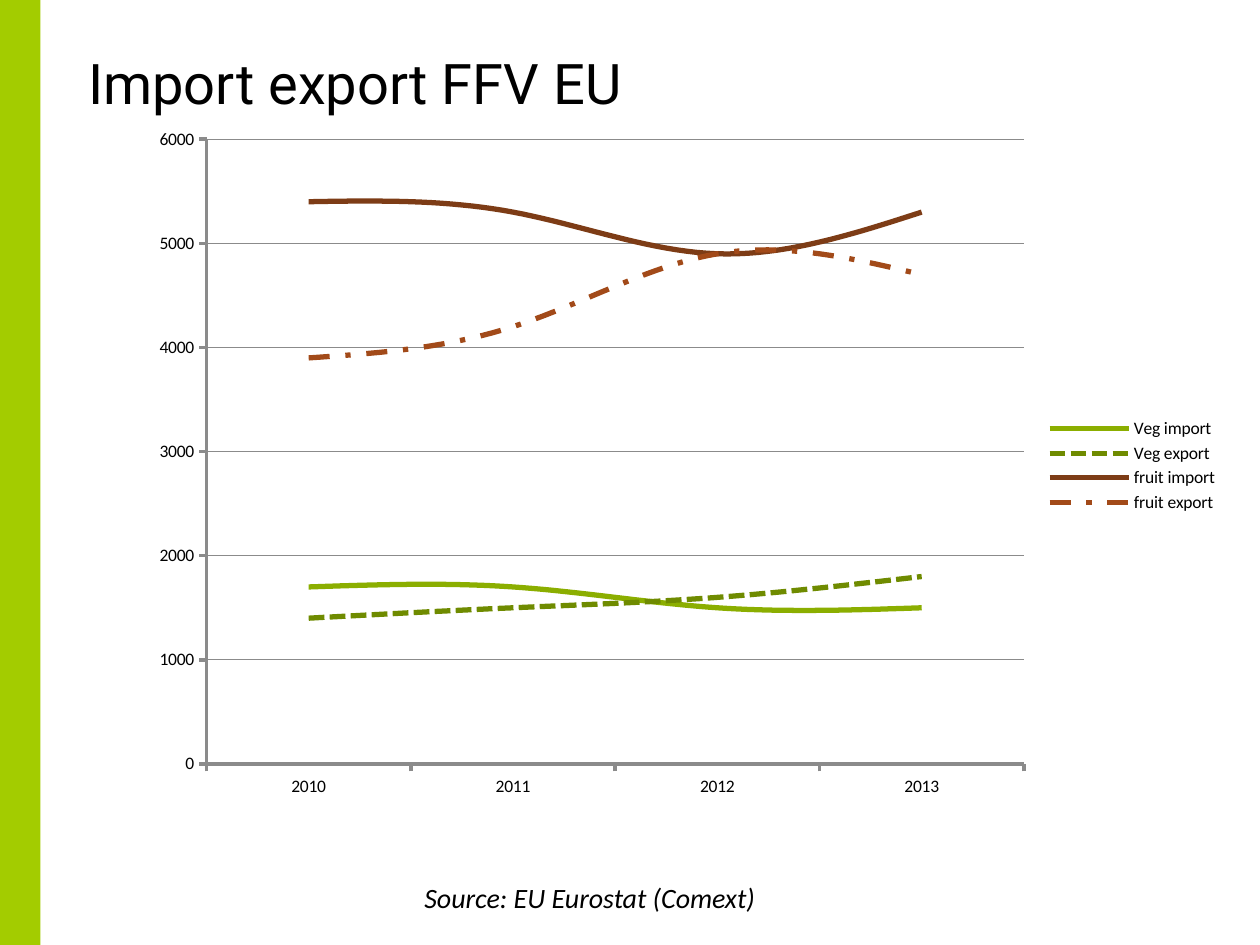
"""Build a slide with a line chart of EU fruit and vegetable trade."""
from dataclasses import dataclass

from lxml import etree
from pptx import Presentation
from pptx.chart.data import CategoryChartData
from pptx.dml.color import RGBColor
from pptx.enum.chart import XL_CHART_TYPE, XL_LEGEND_POSITION, XL_MARKER_STYLE, XL_TICK_MARK
from pptx.enum.dml import MSO_LINE
from pptx.enum.shapes import MSO_SHAPE
from pptx.oxml.ns import qn
from pptx.util import Inches, Pt

LINE = XL_CHART_TYPE.LINE
RIGHT = XL_LEGEND_POSITION.RIGHT
NO_MARKER = XL_MARKER_STYLE.NONE
OUTSIDE = XL_TICK_MARK.OUTSIDE
NO_TICK = XL_TICK_MARK.NONE
SOLID, DOTTED, DASH_DOT = MSO_LINE.SOLID, MSO_LINE.SQUARE_DOT, MSO_LINE.DASH_DOT
RECTANGLE = MSO_SHAPE.RECTANGLE


@dataclass(frozen=True)
class Theme:
    """Colours, fonts and type sizes of the slide."""
    band: str = "A3CC00"
    text: str = "000000"
    axis: str = "8B8B8B"
    title_font: str = "Roboto"
    body_font: str = "Calibri"
    title_size: int = 32
    source_size: int = 16
    chart_size: int = 10


THEME = Theme()
YEARS = ["2010", "2011", "2012", "2013"]
SERIES = [
    ("Veg import", (1700, 1700, 1500, 1500), "8BAE00", SOLID),
    ("Veg export", (1400, 1500, 1600, 1800), "6F8B00", DOTTED),
    ("fruit import", (5400, 5300, 4900, 5300), "7D3C16", SOLID),
    ("fruit export", (3900, 4200, 4900, 4700), "A24A19", DASH_DOT),
]


def rgb(value):
    """Return a colour from its hex value."""
    return RGBColor.from_string(value)


def add_band(s, x, y, w, h, color):
    """Add a plain filled rectangle."""
    sp = s.shapes.add_shape(RECTANGLE, Inches(x), Inches(y), Inches(w), Inches(h))
    sp.shadow.inherit = False
    sp.fill.solid()
    sp.fill.fore_color.rgb = rgb(color)
    sp.line.fill.background()


def add_text(s, text, x, y, w, h, *, font, size, italic=False, inset=None, leading=None, wrap=True):
    """Add a text box with one formatted paragraph."""
    tf = s.shapes.add_textbox(Inches(x), Inches(y), Inches(w), Inches(h)).text_frame
    tf.word_wrap = wrap
    if inset is not None:
        tf.margin_left = tf.margin_top = tf.margin_right = tf.margin_bottom = Inches(inset)
    p = tf.paragraphs[0]
    if leading:
        p.line_spacing = Pt(leading)
    r = p.add_run()
    r.text = text
    r.font.name = font
    r.font.size = Pt(size)
    r.font.italic = italic
    r.font.color.rgb = rgb(THEME.text)


def style_line(line, color, width, dash=SOLID):
    """Set the colour, width and dash of a line."""
    line.color.rgb = rgb(color)
    line.width = Pt(width)
    line.dash_style = dash


def set_plot_layout(chart, **fractions):
    """Fix the inner plot area as fractions of the chart."""
    area = chart.plots[0]._element.getparent()
    for old in area.findall(qn("c:layout")):
        area.remove(old)
    layout = etree.Element(qn("c:layout"))
    area.insert(0, layout)
    manual = etree.SubElement(layout, qn("c:manualLayout"))
    settings = {"layoutTarget": "inner", "xMode": "edge", "yMode": "edge", **fractions}
    for name, value in settings.items():
        etree.SubElement(manual, qn(f"c:{name}")).set("val", str(value))


def add_line_chart(s, x, y, w, h):
    """Add the smoothed line chart with its axes and legend."""
    data = CategoryChartData(number_format="General")
    data.categories = YEARS
    for name, values, _, _ in SERIES:
        data.add_series(name, values)
    chart = s.shapes.add_chart(LINE, Inches(x), Inches(y), Inches(w), Inches(h), data).chart
    chart.has_title = False
    chart.font.name = THEME.body_font
    chart.font.size = Pt(THEME.chart_size)
    chart.font.color.rgb = rgb(THEME.text)
    chart.has_legend = True
    chart.legend.position = RIGHT
    chart.legend.include_in_layout = False
    for axis in (chart.category_axis, chart.value_axis):
        axis.major_tick_mark = OUTSIDE
        axis.minor_tick_mark = NO_TICK
        style_line(axis.format.line, THEME.axis, 2)
    axis = chart.value_axis
    axis.minimum_scale, axis.maximum_scale, axis.major_unit = 0, 6000, 1000
    axis.has_major_gridlines = True
    style_line(axis.major_gridlines.format.line, THEME.axis, 0.75)
    plot = chart.plots[0]
    plot.vary_by_categories = False
    for series, (_, _, color, dash) in zip(plot.series, SERIES):
        series.smooth = True
        series.marker.style = NO_MARKER
        style_line(series.format.line, color, 3, dash)
    set_plot_layout(chart, x=0.06, y=0.03, w=0.75, h=0.9)


def main():
    """Build and save the slide."""
    prs = Presentation()
    prs.slide_width, prs.slide_height = Inches(10), Inches(7.5)
    s = prs.slides.add_slide(prs.slide_layouts[6])
    add_band(s, 0, 0, 0.32, 7.5, THEME.band)
    add_text(s, "Import export FFV EU", 0.7, 0.39, 8.95, 1.22,
             font=THEME.title_font, size=THEME.title_size, inset=0, leading=38)
    add_line_chart(s, 1.12, 0.94, 8.65, 5.51)
    add_text(s, "Source: EU Eurostat (Comext)", 3.27, 6.94, 2.86, 0.37,
             font=THEME.body_font, size=THEME.source_size, italic=True, wrap=False)
    prs.save("out.pptx")


if __name__ == "__main__":
    main()
